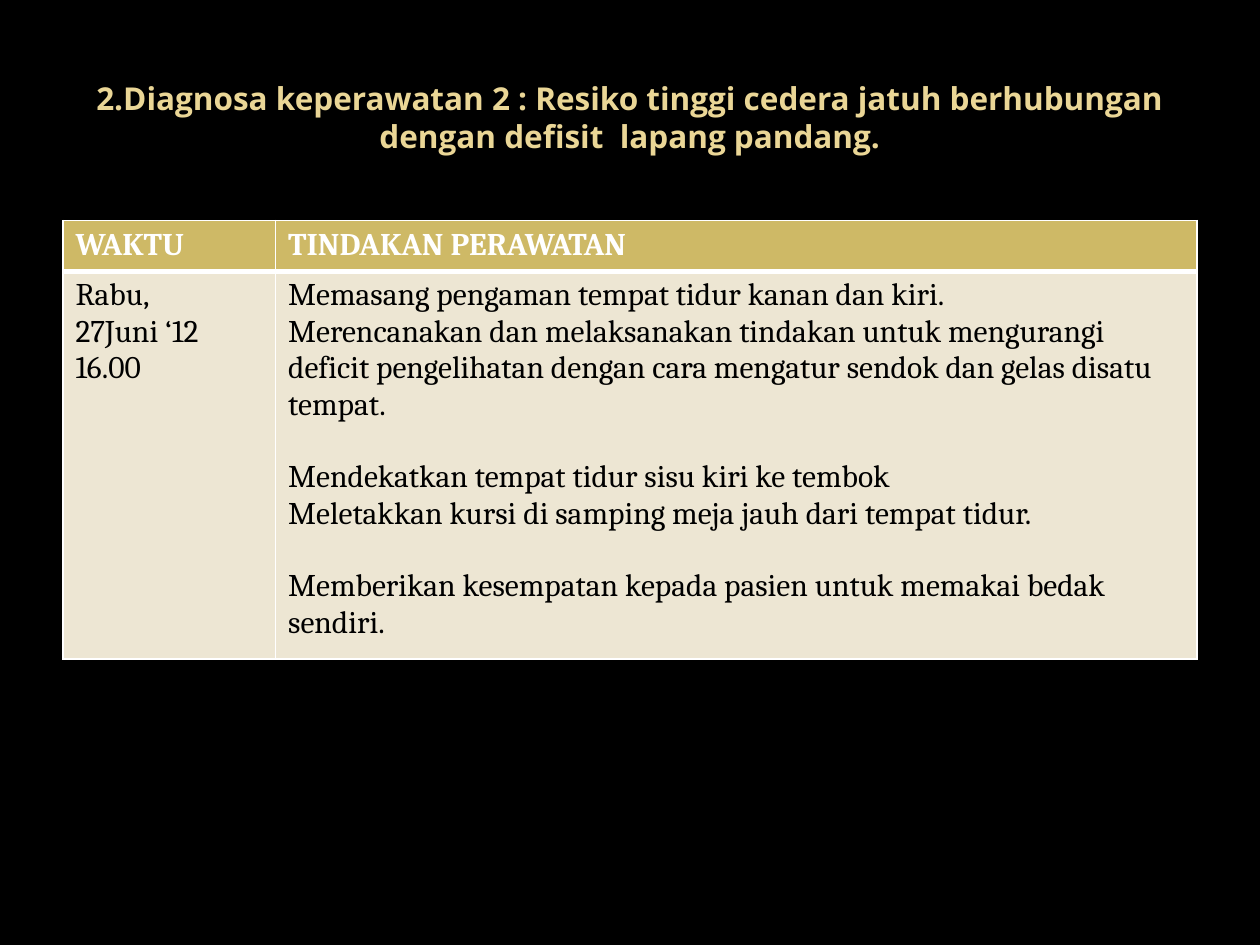
from lxml import etree
from pptx import Presentation
from pptx.dml.color import RGBColor
from pptx.enum.text import MSO_ANCHOR, PP_ALIGN
from pptx.oxml.ns import qn
from pptx.util import Pt

CENTER = PP_ALIGN.CENTER
MIDDLE = MSO_ANCHOR.MIDDLE

BLACK, WHITE = "000000", "FFFFFF"
TITLE_GOLD, HEADER_GOLD, BODY_CREAM = "EAD696", "CEB966", "EDE6D3"
TEXT_SIZE = 18
LINE_GAP = 20.8

TITLE = ("2.Diagnosa keperawatan 2 : Resiko tinggi cedera jatuh berhubungan "
         "dengan defisit  lapang pandang.")
HEADINGS = ["WAKTU", "TINDAKAN PERAWATAN"]
TIME = ["Rabu,", "27Juni ‘12", "16.00"]
ACTION_GROUPS = [
    ["Memasang pengaman tempat tidur kanan dan kiri.",
     "Merencanakan dan melaksanakan tindakan untuk mengurangi deficit "
     "pengelihatan dengan cara mengatur sendok dan gelas disatu tempat."],
    ["Mendekatkan tempat tidur sisu kiri ke tembok",
     "Meletakkan kursi di samping meja jauh dari tempat tidur."],
    ["Memberikan kesempatan kepada pasien untuk memakai bedak sendiri."],
]


def rgb(value):
    return RGBColor.from_string(value)


def format_text(frame, font_name, color, bold):
    for paragraph in frame.paragraphs:
        for run in paragraph.runs:
            run.font.name = font_name
            run.font.size = Pt(TEXT_SIZE)
            run.font.bold = bold
            run.font.color.rgb = rgb(color)


def add_title(slide):
    title = slide.shapes.add_textbox(Pt(36), Pt(21.6), Pt(648), Pt(90))
    frame = title.text_frame
    frame.word_wrap = True
    frame.vertical_anchor = MIDDLE
    frame.text = TITLE
    frame.paragraphs[0].alignment = CENTER
    format_text(frame, "Open Sans", TITLE_GOLD, True)


def set_borders(cell, top=1, bottom=1):
    """Draw white borders, with widths in points."""
    properties = cell._tc.get_or_add_tcPr()
    widths = {"a:lnL": 1, "a:lnR": 1, "a:lnT": top, "a:lnB": bottom}
    for position, (side, width) in enumerate(widths.items()):
        line = etree.Element(qn(side), w=str(Pt(width)))
        fill = etree.SubElement(line, qn("a:solidFill"))
        etree.SubElement(fill, qn("a:srgbClr"), val=WHITE)
        properties.insert(position, line)


def fill_cell(cell, groups, fill, color, bold):
    """Write groups of lines, with a line of space between the groups."""
    frame = cell.text_frame
    frame.text = "\n".join(line for group in groups for line in group)
    start = 0
    for group in groups[:-1]:
        start += len(group)
        frame.paragraphs[start].space_before = Pt(LINE_GAP)
    format_text(frame, "Cambria", color, bold)
    cell.fill.solid()
    cell.fill.fore_color.rgb = rgb(fill)


def add_care_table(slide):
    frame = slide.shapes.add_table(2, 2, Pt(36), Pt(126), Pt(648), Pt(244.5))
    table = frame.table
    for column, width in zip(table.columns, (121.5, 526.5)):
        column.width = Pt(width)
    for row, height in zip(table.rows, (29, 215.5)):
        row.height = Pt(height)
    for column, (heading, groups) in enumerate(zip(HEADINGS, ([TIME], ACTION_GROUPS))):
        header, body = table.cell(0, column), table.cell(1, column)
        fill_cell(header, [[heading]], HEADER_GOLD, WHITE, True)
        fill_cell(body, groups, BODY_CREAM, BLACK, False)
        set_borders(header, bottom=3)
        set_borders(body, top=3)


def main():
    presentation = Presentation()
    presentation.slide_width, presentation.slide_height = Pt(720), Pt(540)
    slide = presentation.slides.add_slide(presentation.slide_layouts[6])
    slide.background.fill.solid()
    slide.background.fill.fore_color.rgb = rgb(BLACK)
    add_title(slide)
    add_care_table(slide)
    presentation.save("out.pptx")


if __name__ == "__main__":
    main()
